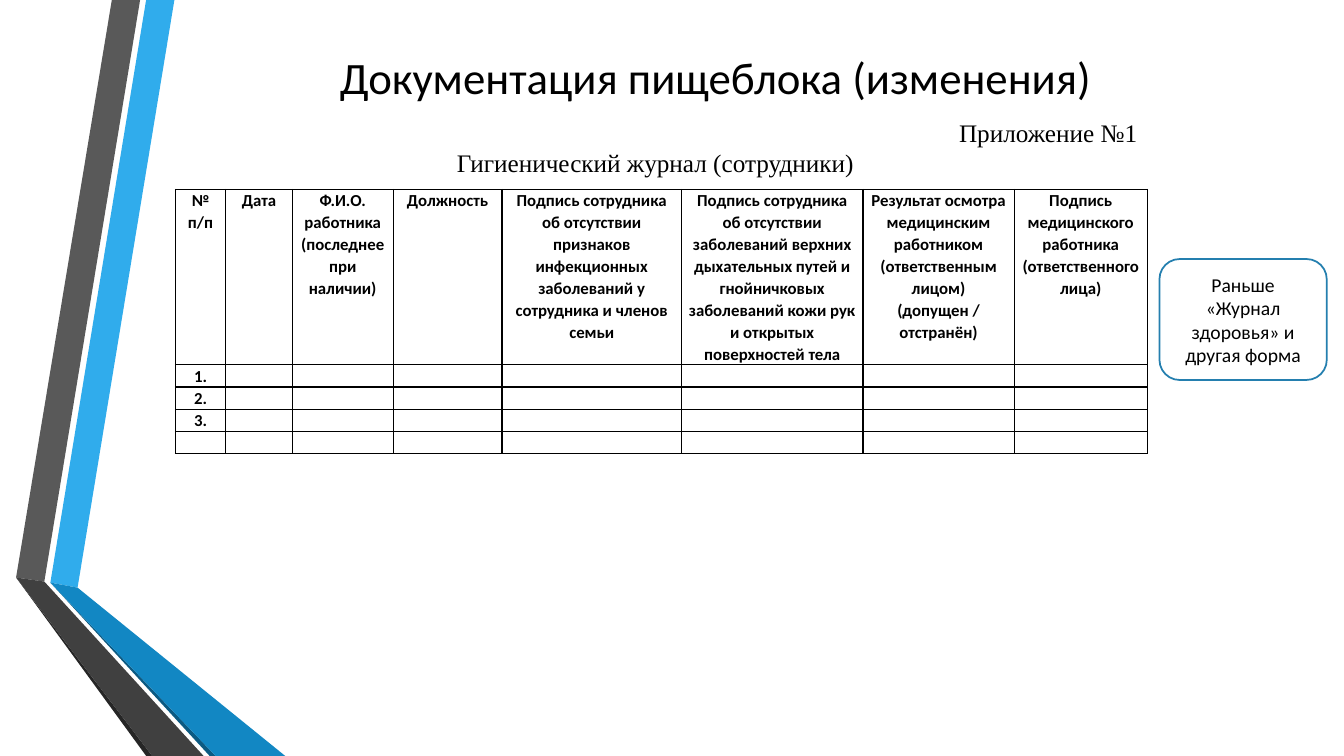
from lxml import etree
from pptx import Presentation
from pptx.dml.color import RGBColor
from pptx.enum.shapes import MSO_SHAPE
from pptx.enum.text import MSO_ANCHOR, PP_ALIGN
from pptx.oxml.ns import qn
from pptx.util import Inches, Pt

BLACK = RGBColor(0x00, 0x00, 0x00)
WHITE = RGBColor(0xFF, 0xFF, 0xFF)
NOTE_LINE = RGBColor(0x24, 0x7F, 0xAF)
BLUE = RGBColor(0x30, 0xAC, 0xEC)
BLUE_DARK = RGBColor(0x12, 0x87, 0xC3)
BLUE_EDGE = RGBColor(0x0C, 0x5A, 0x82)
GREY = RGBColor(0x59, 0x59, 0x59)
GREY_DARK = RGBColor(0x40, 0x40, 0x40)
GREY_EDGE = RGBColor(0x26, 0x26, 0x26)

CENTER, RIGHT = PP_ALIGN.CENTER, PP_ALIGN.RIGHT
TOP, MIDDLE = MSO_ANCHOR.TOP, MSO_ANCHOR.MIDDLE
ROUNDED = MSO_SHAPE.ROUNDED_RECTANGLE

SLIDE_W, SLIDE_H = Inches(13.33), Inches(7.5)

# Ribbon corners in inches
BLUE_BEND, BLUE_FOLD = (0.5, 5.78), (0.77, 5.83)
GREY_BEND, GREY_FOLD = (0.16, 5.73), (0.44, 5.77)
RIBBONS = [
    (BLUE, [BLUE_BEND, BLUE_FOLD, (1.73, 0), (1.45, 0)]),
    (GREY, [GREY_BEND, GREY_FOLD, (1.39, 0), (1.11, 0)]),
    (GREY_EDGE, [GREY_BEND, (1.45, 7.5), (1.51, 7.5)]),
    (BLUE_EDGE, [BLUE_BEND, (2.08, 7.5), (2.14, 7.5)]),
    (BLUE_DARK, [BLUE_BEND, (2.14, 7.5), (2.83, 7.5), BLUE_FOLD]),
    (GREY_DARK, [GREY_BEND, (1.51, 7.5), (2.02, 7.5), GREY_FOLD]),
]

JOURNAL_COLUMNS = [
    (0.5, "№ п/п"),
    (0.66, "Дата"),
    (1, "Ф.И.О. работника (последнее при наличии)"),
    (1.08, "Должность"),
    (1.78, "Подпись сотрудника об отсутствии признаков инфекционных "
           "заболеваний у сотрудника и членов семьи"),
    (1.8, "Подпись сотрудника об отсутствии заболеваний верхних дыхательных "
          "путей и гнойничковых заболеваний кожи рук и открытых "
          "поверхностей тела"),
    (1.5, "Результат осмотра медицинским работником (ответственным лицом)\n"
          "(допущен / отстранён)"),
    (1.32, "Подпись медицинского работника (ответственного лица)"),
]
ROW_LABELS = ["1.", "2.", "3.", ""]
HEADER_H, ROW_H = 1.74, 0.22


def frame(left, top, width, height):
    """Turn percentages of the slide's size into lengths."""
    return (int(SLIDE_W * left / 100), int(SLIDE_H * top / 100),
            int(SLIDE_W * width / 100), int(SLIDE_H * height / 100))


def place(sp, box):
    sp.left, sp.top, sp.width, sp.height = box


def write(tf, text, size=12, font="Calibri", bold=False, aligns=(CENTER,),
          spacing=1.0, anchor=MIDDLE):
    """Fill a text frame, one paragraph a line; the last alignment repeats."""
    tf.word_wrap = True
    tf.vertical_anchor = anchor
    for i, line in enumerate(text.split("\n")):
        p = tf.add_paragraph() if i else tf.paragraphs[0]
        p.alignment = aligns[min(i, len(aligns) - 1)]
        p.line_spacing = spacing
        p.space_before = p.space_after = Pt(0)
        if not line:
            end = etree.SubElement(p._p, qn("a:endParaRPr"))
            end.set("sz", str(size * 100))
            continue
        r = p.add_run()
        r.text = line
        r.font.size, r.font.name, r.font.bold = Pt(size), font, bold
        r.font.color.rgb = BLACK


def remove_bullets(tf):
    for p in tf.paragraphs:
        pPr = p._p.get_or_add_pPr()
        pPr.set("marL", "0")
        pPr.set("indent", "0")
        etree.SubElement(pPr, qn("a:buNone"))


def add_ribbon(slide, color, corners):
    points = [(Inches(x), Inches(y)) for x, y in corners]
    builder = slide.shapes.build_freeform(*points[0])
    builder.add_line_segments(points[1:], close=True)
    sp = builder.convert_to_shape()
    sp.shadow.inherit = False
    sp.fill.solid()
    sp.fill.fore_color.rgb = color
    sp.line.fill.background()


def border_cell(cell):
    tcPr = cell._tc.get_or_add_tcPr()
    for i, side in enumerate(("lnL", "lnR", "lnT", "lnB")):
        ln = etree.Element(qn(f"a:{side}"), w=str(Pt(1)))
        fill = etree.SubElement(ln, qn("a:solidFill"))
        etree.SubElement(fill, qn("a:srgbClr"), val=str(BLACK))
        tcPr.insert(i, ln)


def add_journal(slide, box):
    rows = [[title for _, title in JOURNAL_COLUMNS]]
    rows += [[label] + [""] * (len(JOURNAL_COLUMNS) - 1) for label in ROW_LABELS]
    table = slide.shapes.add_table(len(rows), len(JOURNAL_COLUMNS), *box).table
    table.first_row = table.horz_banding = False
    for column, (width, _) in zip(table.columns, JOURNAL_COLUMNS):
        column.width = Inches(width)
    for i, texts in enumerate(rows):
        table.rows[i].height = Inches(ROW_H if i else HEADER_H)
        for cell, text in zip(table.rows[i].cells, texts):
            cell.margin_left = cell.margin_right = Inches(0.07)
            cell.margin_top = cell.margin_bottom = 0
            cell.fill.solid()
            cell.fill.fore_color.rgb = WHITE
            border_cell(cell)
            write(cell.text_frame, text, bold=True, spacing=1.07, anchor=TOP)


def add_note(slide, text, box):
    sp = slide.shapes.add_shape(ROUNDED, *box)
    sp.shadow.inherit = False
    sp.fill.solid()
    sp.fill.fore_color.rgb = WHITE
    sp.line.color.rgb = NOTE_LINE
    sp.line.width = Pt(1.25)
    write(sp.text_frame, text, size=14)


def main():
    prs = Presentation()
    prs.slide_width, prs.slide_height = SLIDE_W, SLIDE_H
    slide = prs.slides.add_slide(prs.slide_layouts[1])
    title, body = slide.placeholders

    for color, corners in RIBBONS:
        add_ribbon(slide, color, corners)

    place(title, frame(12.15, 4.8, 82.22, 10.67))
    write(title.text_frame, "Документация пищеблока (изменения)", size=32)

    place(body, frame(12.15, 14.53, 73.22, 13.47))
    body.text_frame.margin_top = Inches(0.07)
    write(body.text_frame, "Приложение №1\nГигиенический журнал (сотрудники)",
          size=18, font="Times New Roman", aligns=(RIGHT, CENTER), anchor=TOP)
    remove_bullets(body.text_frame)

    add_journal(slide, frame(13.05, 25.07, 72.32, 34.93))
    add_note(slide, "Раньше «Журнал здоровья» и другая форма",
             frame(86.27, 34.27, 12.45, 16))
    prs.save("out.pptx")


if __name__ == "__main__":
    main()
